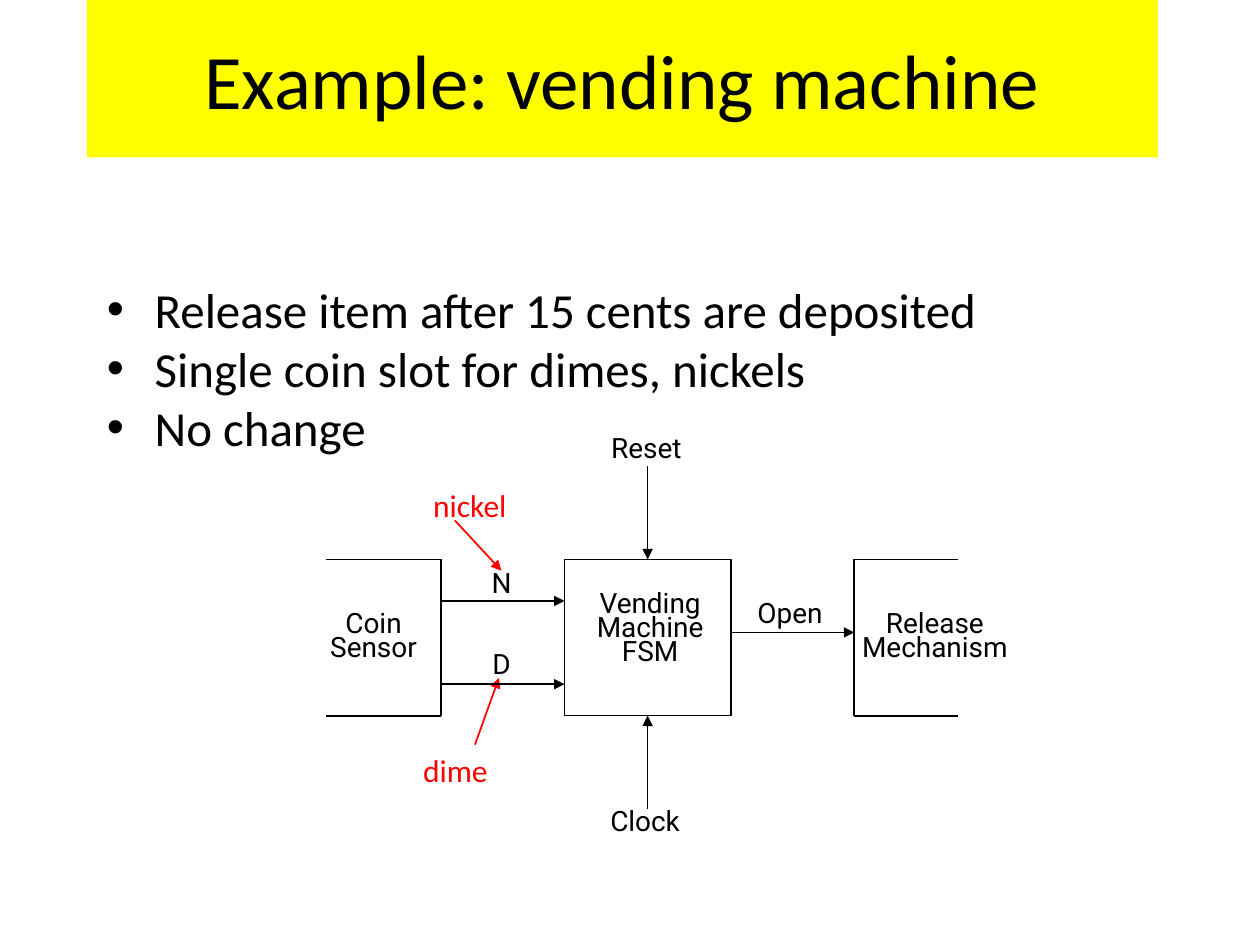
"""Build the vending machine state machine slide."""
from lxml.etree import SubElement
from pptx import Presentation
from pptx.dml.color import RGBColor
from pptx.enum.shapes import MSO_CONNECTOR, MSO_SHAPE
from pptx.enum.text import MSO_ANCHOR, PP_ALIGN
from pptx.oxml.ns import qn
from pptx.util import Inches, Pt

BLACK = RGBColor(0, 0, 0)
RED = RGBColor(255, 0, 0)
YELLOW = RGBColor(255, 255, 0)

TITLE = "Example: vending machine"
BULLETS = [
    "Release item after 15 cents are deposited",
    "Single coin slot for dimes, nickels",
    "No change",
]
DIAGRAM_LABELS = [
    ("Vending\nMachine\nFSM", 4.69, 4.69, 0.94, 0.74),
    ("N", 3.82, 4.53, 0.32, 0.36),
    ("D", 3.82, 5.18, 0.32, 0.36),
    ("Reset", 4.79, 3.46, 0.68, 0.36),
    ("Clock", 4.78, 6.42, 0.68, 0.36),
    ("Open", 5.93, 4.77, 0.68, 0.36),
    ("Coin\nSensor", 2.55, 4.85, 0.83, 0.55),
    ("Release\nMechanism", 6.79, 4.85, 1.26, 0.55),
]
COIN_NOTES = [("nickel", 3.34, 3.81), ("dime", 3.26, 5.91)]

TOP, BOTTOM = 4.44, 5.68
SENSOR_LEFT, SENSOR_RIGHT = 2.59, 3.5
FSM_LEFT, FSM_RIGHT = 4.48, 5.8
FSM_CENTER = (FSM_LEFT + FSM_RIGHT) / 2
RELEASE_LEFT, RELEASE_RIGHT = 6.78, 7.6
BRACKETS = [(SENSOR_RIGHT, SENSOR_LEFT), (RELEASE_LEFT, RELEASE_RIGHT)]
SIGNALS = [
    (RED, 3.61, 4.13, 3.98, 4.53),
    (RED, 3.77, 5.91, 3.96, 5.38),
    (BLACK, FSM_RIGHT, 5.02, RELEASE_LEFT, 5.02),
    (BLACK, SENSOR_RIGHT, 4.77, FSM_LEFT, 4.77),
    (BLACK, SENSOR_RIGHT, 5.43, FSM_LEFT, 5.43),
    (BLACK, FSM_CENTER, 3.7, FSM_CENTER, TOP),
    (BLACK, FSM_CENTER, 6.42, FSM_CENTER, BOTTOM),
]


def write(paragraph, text, font_name, size, color=BLACK):
    paragraph.text = text
    for run in paragraph.runs:
        run.font.name = font_name
        run.font.size = Pt(size)
        run.font.color.rgb = color


def add_text_box(slide, left, top, width, height, wrap=True):
    box = slide.shapes.add_textbox(*map(Inches, (left, top, width, height)))
    box.text_frame.word_wrap = wrap
    return box.text_frame


def add_rectangle(slide, left, top, width, height):
    shape = slide.shapes.add_shape(
        MSO_SHAPE.RECTANGLE, *map(Inches, (left, top, width, height)))
    shape.shadow.inherit = False
    return shape


def add_line(slide, color, *ends, arrow=False):
    connector = slide.shapes.add_connector(
        MSO_CONNECTOR.STRAIGHT, *map(Inches, ends))
    connector.line.color.rgb = color
    connector.line.width = Pt(1)
    properties = connector._element.spPr
    if arrow:
        SubElement(properties.find(qn("a:ln")), qn("a:tailEnd"), type="triangle")
    SubElement(properties, qn("a:effectLst"))


def add_title(slide):
    banner = add_rectangle(slide, 0.69, 0, 8.5, 1.25)
    banner.fill.solid()
    banner.fill.fore_color.rgb = YELLOW
    banner.line.fill.background()
    banner.text_frame.vertical_anchor = MSO_ANCHOR.MIDDLE
    paragraph = banner.text_frame.paragraphs[0]
    write(paragraph, TITLE, "Calibri", 44)
    paragraph.alignment = PP_ALIGN.CENTER


def add_bullets(slide):
    text_frame = add_text_box(slide, 0.75, 2.17, 8.5, 4.5)
    text_frame.text = "\n".join(BULLETS)
    for paragraph, bullet in zip(text_frame.paragraphs, BULLETS):
        write(paragraph, bullet, "Calibri", 28)
        properties = paragraph._p.get_or_add_pPr()
        properties.set("marL", str(Inches(0.38)))
        properties.set("indent", str(-Inches(0.38)))
        SubElement(properties, qn("a:buFont"), typeface="Arial")
        SubElement(properties, qn("a:buChar"), char="•")


def add_diagram(slide):
    for text, *place in DIAGRAM_LABELS:
        text_frame = add_text_box(slide, *place, wrap=False)
        text_frame.margin_left = text_frame.margin_right = Inches(0.02)
        text_frame.margin_top = text_frame.margin_bottom = Inches(0.03)
        paragraph = text_frame.paragraphs[0]
        write(paragraph, text, "Roboto", 16)
        paragraph.alignment = PP_ALIGN.CENTER
        paragraph.line_spacing = Pt(13.8)

    machine = add_rectangle(slide, FSM_LEFT, TOP, FSM_RIGHT - FSM_LEFT, BOTTOM - TOP)
    machine.fill.background()
    machine.line.color.rgb = BLACK
    machine.line.width = Pt(1)

    for wall, open_end in BRACKETS:
        add_line(slide, BLACK, wall, TOP, wall, BOTTOM)
        for edge in (TOP, BOTTOM):
            add_line(slide, BLACK, wall, edge, open_end, edge)
    for color, *ends in SIGNALS:
        add_line(slide, color, *ends, arrow=True)
    for text, left, top in COIN_NOTES:
        text_frame = add_text_box(slide, left, top, 1.14, 0.4)
        write(text_frame.paragraphs[0], text, "Calibri", 18, RED)


def main():
    presentation = Presentation()
    presentation.slide_width = Inches(10)
    presentation.slide_height = Inches(7.5)
    slide = presentation.slides.add_slide(presentation.slide_layouts[6])
    add_title(slide)
    add_bullets(slide)
    add_diagram(slide)
    presentation.save("out.pptx")


if __name__ == "__main__":
    main()
